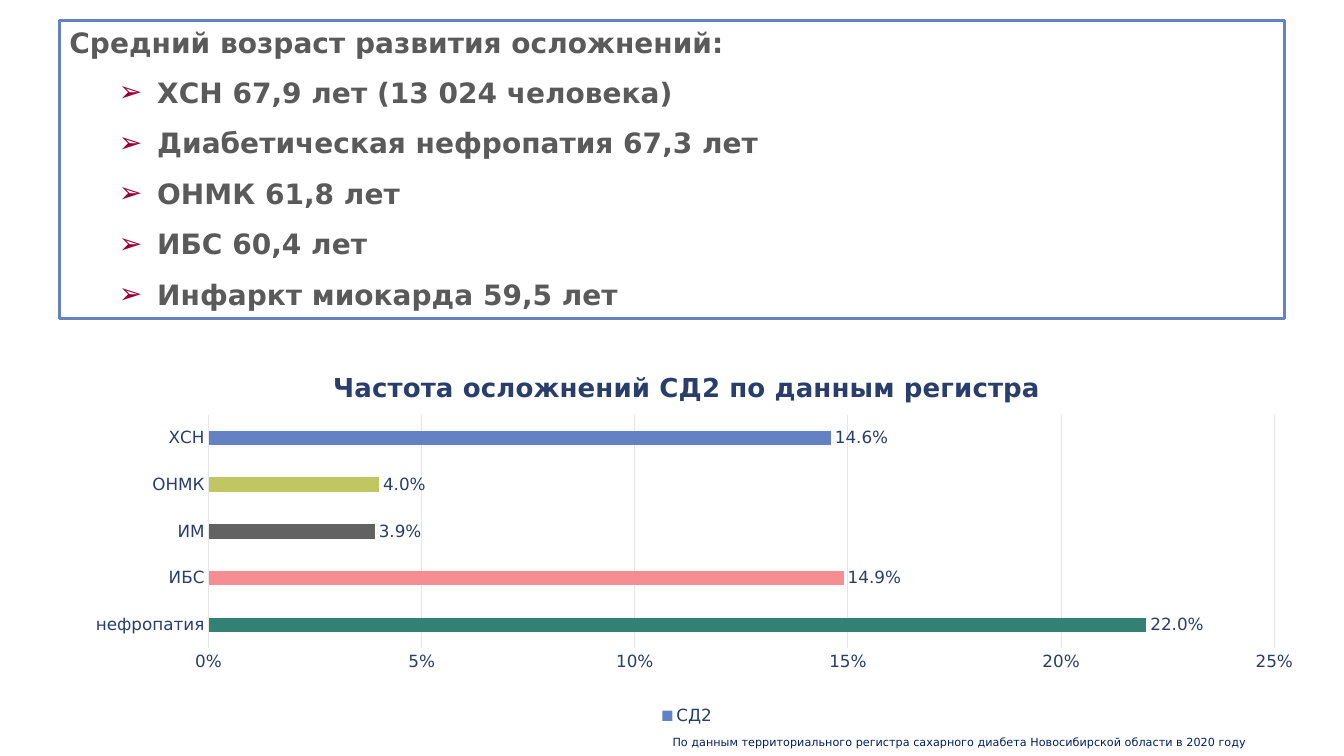
from lxml.etree import SubElement
from pptx import Presentation
from pptx.chart.data import CategoryChartData
from pptx.dml.color import RGBColor
from pptx.enum.chart import XL_CHART_TYPE, XL_LABEL_POSITION, XL_LEGEND_POSITION, XL_TICK_MARK
from pptx.enum.shapes import MSO_SHAPE
from pptx.enum.text import MSO_ANCHOR, MSO_AUTO_SIZE, PP_ALIGN
from pptx.oxml.ns import qn
from pptx.util import Inches, Pt

FONT = "DejaVu Sans"
COLORS = {
    "white": "FFFFFF", "blue": "6482C3", "navy": "293E6A", "source": "002060",
    "text": "5A5A5A", "bullet": "990033", "grid": "E6E6E6", "green": "328173",
    "pink": "F68D93", "grey": "626262", "olive": "BFC662",
}
HEADING = "Средний возраст развития осложнений:"
AGES = [
    "ХСН 67,9 лет (13 024 человека)",
    "Диабетическая нефропатия 67,3 лет",
    "ОНМК 61,8 лет",
    "ИБС 60,4 лет",
    "Инфаркт миокарда 59,5 лет",
]
FREQUENCIES = [
    ("нефропатия", 0.22, "green"),
    ("ИБС", 0.149, "pink"),
    ("ИМ", 0.039, "grey"),
    ("ОНМК", 0.04, "olive"),
    ("ХСН", 0.146, "blue"),
]
CHART_TITLE = "Частота осложнений СД2 по данным регистра"
SOURCE = "По данным территориального регистра сахарного диабета Новосибирской области в 2020 году"


def rgb(name):
    return RGBColor.from_string(COLORS[name])


def style_font(font, size, color, bold=False):
    font.name, font.size, font.bold = FONT, Pt(size), bold
    font.color.rgb = rgb(color)


def write(p, text, size=12, color="text", bold=False, align=PP_ALIGN.LEFT, space=0):
    p.alignment = align
    p.space_before = p.space_after = Pt(space)
    r = p.add_run()
    r.text = text
    style_font(r.font, size, color, bold)


def add_bullet(p, char, color, margin, indent):
    p.level = 1
    pPr = p._p.get_or_add_pPr()
    pPr.set("marL", str(Inches(margin)))
    pPr.set("indent", str(Inches(indent)))
    SubElement(SubElement(pPr, qn("a:buClr")), qn("a:srgbClr")).set("val", COLORS[color])
    SubElement(pPr, qn("a:buFont")).set("typeface", FONT)
    SubElement(pPr, qn("a:buChar")).set("char", char)


def place_plot(chart, x, y, w, h):
    plot_area = chart._chartSpace.chart.plotArea
    for old in plot_area.findall(qn("c:layout")):
        plot_area.remove(old)
    layout = SubElement(plot_area, qn("c:layout"))
    plot_area.insert(0, layout)
    manual = SubElement(layout, qn("c:manualLayout"))
    values = {"layoutTarget": "inner", "xMode": "edge", "yMode": "edge",
              "x": x, "y": y, "w": w, "h": h}
    for tag, value in values.items():
        SubElement(manual, qn(f"c:{tag}")).set("val", str(value))


class SlideBuilder:
    def __init__(self, prs):
        self.s = prs.slides.add_slide(prs.slide_layouts[5])

    def title(self, text, x, y, w, h):
        sp = self.s.shapes.title
        sp.left, sp.top, sp.width, sp.height = map(Inches, (x, y, w, h))
        tf = sp.text_frame
        tf.auto_size = MSO_AUTO_SIZE.NONE
        tf.word_wrap = True
        tf.vertical_anchor = MSO_ANCHOR.BOTTOM
        tf.margin_left = tf.margin_right = tf.margin_top = tf.margin_bottom = 0
        write(tf.paragraphs[0], text, size=8, color="source")

    def panel(self, heading, items, x, y, w, h):
        sp = self.s.shapes.add_shape(MSO_SHAPE.RECTANGLE, *map(Inches, (x, y, w, h)))
        sp.shadow.inherit = False
        sp.fill.solid()
        sp.fill.fore_color.rgb = rgb("white")
        sp.line.color.rgb = rgb("blue")
        sp.line.width = Pt(2)
        tf = sp.text_frame
        tf.word_wrap = True
        tf.auto_size = MSO_AUTO_SIZE.SHAPE_TO_FIT_TEXT
        tf.vertical_anchor = MSO_ANCHOR.TOP
        write(tf.paragraphs[0], heading, size=20, bold=True, space=6)
        for item in items:
            p = tf.add_paragraph()
            write(p, item, size=20, bold=True, space=6)
            add_bullet(p, "➢", "bullet", 0.87, -0.38)

    def bar_chart(self, title, name, rows, x, y, w, h):
        data = CategoryChartData(number_format="0.0%")
        data.categories = [row[0] for row in rows]
        data.add_series(name, [row[1] for row in rows])
        frame = self.s.shapes.add_chart(
            XL_CHART_TYPE.BAR_CLUSTERED, *map(Inches, (x, y, w, h)), data)
        chart = frame.chart
        style_font(chart.font, 10, "navy")
        chart.has_title = True
        write(chart.chart_title.text_frame.paragraphs[0], title,
              size=18.6, color="navy", bold=True, align=PP_ALIGN.CENTER)
        chart.chart_title.include_in_layout = False
        chart.has_legend = True
        chart.legend.position = XL_LEGEND_POSITION.BOTTOM
        chart.legend.include_in_layout = False
        style_font(chart.legend.font, 12, "navy")
        self.axes(chart)
        self.bars(chart.plots[0], [row[2] for row in rows])
        place_plot(chart, 0.126, 0.164, 0.833, 0.62)

    def axes(self, chart):
        cat, val = chart.category_axis, chart.value_axis
        for axis in (cat, val):
            axis.major_tick_mark = axis.minor_tick_mark = XL_TICK_MARK.NONE
            style_font(axis.tick_labels.font, 12, "navy")
        cat.has_major_gridlines = False
        val.has_major_gridlines = True
        for line in (cat.format.line, val.major_gridlines.format.line):
            line.color.rgb = rgb("grid")
            line.width = Pt(0.75)
        val.format.line.fill.background()
        val.minimum_scale, val.maximum_scale, val.major_unit = 0, 0.25, 0.05
        val.tick_labels.number_format = "0%"
        val.tick_labels.number_format_is_linked = False

    def bars(self, plot, colors):
        plot.vary_by_categories = False
        plot.gap_width = 219
        series = plot.series[0]
        series.format.fill.solid()
        series.format.fill.fore_color.rgb = rgb("blue")
        for i, color in enumerate(colors):
            fill = series.points[i].format.fill
            fill.solid()
            fill.fore_color.rgb = rgb(color)
        labels = series.data_labels
        labels.show_value = True
        labels.position = XL_LABEL_POSITION.OUTSIDE_END
        labels.number_format = "0.0%"
        labels.number_format_is_linked = False
        style_font(labels.font, 12, "navy")


def main():
    prs = Presentation()
    prs.slide_width, prs.slide_height = Inches(13.33), Inches(7.5)
    slide = SlideBuilder(prs)
    slide.bar_chart(CHART_TITLE, "СД2", FREQUENCIES, 0.47, 3.5, 12.69, 3.74)
    slide.title(SOURCE, 6.67, 6.93, 6.62, 0.5)
    slide.panel(HEADING, AGES, 0.59, 0.2, 12.15, 2.96)
    prs.save("out.pptx")


if __name__ == "__main__":
    main()
